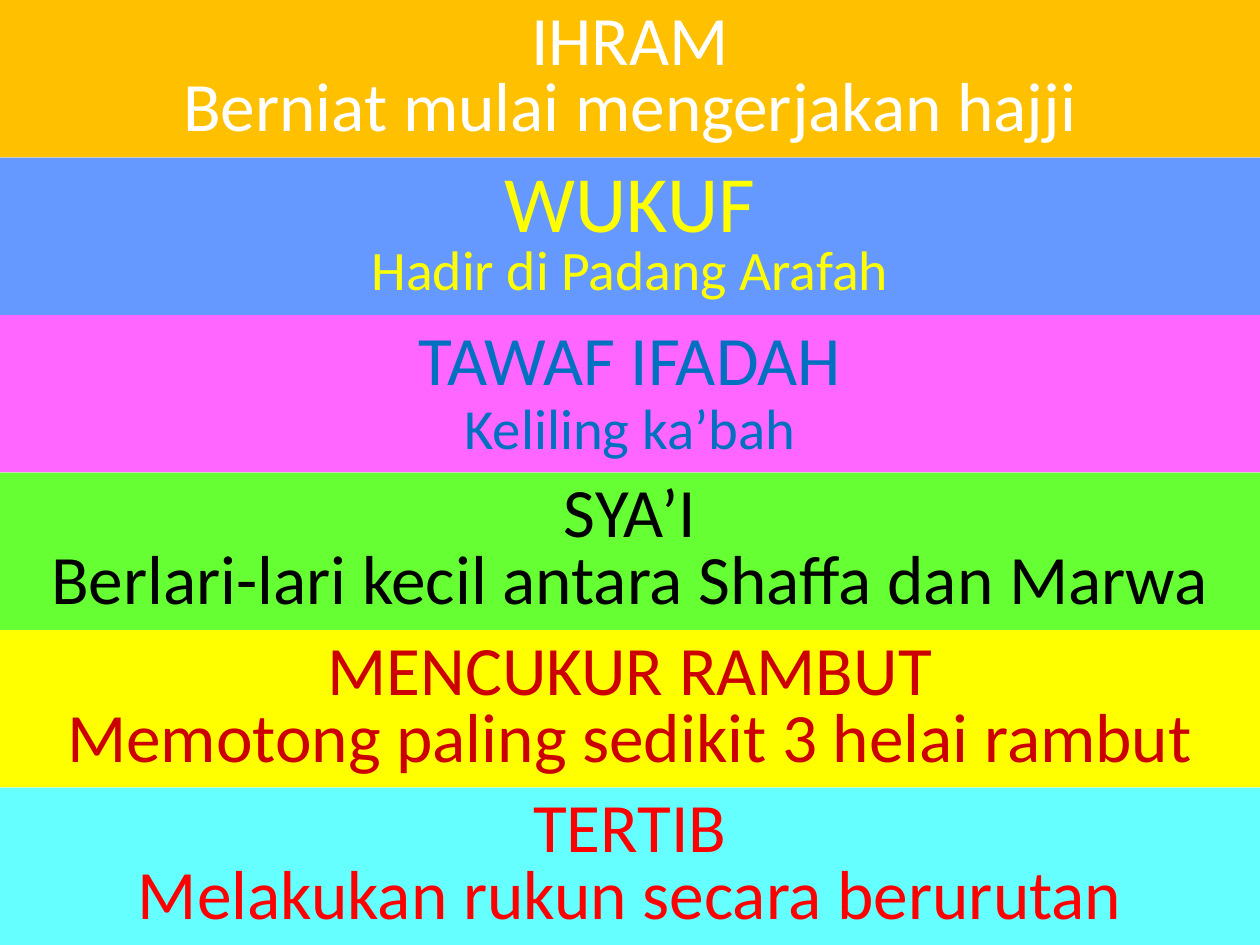
from pptx import Presentation
from pptx.dml.color import RGBColor
from pptx.enum.shapes import MSO_SHAPE
from pptx.enum.text import MSO_ANCHOR, MSO_AUTO_SIZE, PP_ALIGN
from pptx.util import Inches, Pt

RECTANGLE = MSO_SHAPE.RECTANGLE
MIDDLE = MSO_ANCHOR.MIDDLE
NO_AUTOFIT = MSO_AUTO_SIZE.NONE
CENTER = PP_ALIGN.CENTER

ORANGE = RGBColor(0xFF, 0xC0, 0x00)
BLUE = RGBColor(0x66, 0x99, 0xFF)
PINK = RGBColor(0xFF, 0x66, 0xFF)
GREEN = RGBColor(0x66, 0xFF, 0x33)
YELLOW = RGBColor(0xFF, 0xFF, 0x00)
CYAN = RGBColor(0x66, 0xFF, 0xFF)
WHITE = RGBColor(0xFF, 0xFF, 0xFF)
DARK_BLUE = RGBColor(0x00, 0x70, 0xC0)
BLACK = RGBColor(0x00, 0x00, 0x00)
DARK_RED = RGBColor(0xCC, 0x00, 0x00)
RED = RGBColor(0xFF, 0x00, 0x00)

FONT = "Calibri"
BAND_WIDTH = 10
BAND_HEIGHT = 1.25


def format_band(band, fill_color, text_color, sizes, line_spacing):
    """Style a band; sizes holds one text size per paragraph."""
    band.fill.solid()
    band.fill.fore_color.rgb = fill_color
    frame = band.text_frame
    frame.word_wrap = True
    frame.auto_size = NO_AUTOFIT
    frame.vertical_anchor = MIDDLE
    for para, size in zip(frame.paragraphs, sizes):
        para.alignment = CENTER
        para.line_spacing = line_spacing
        para.font.size = Pt(size)
        for span in para.runs:
            span.font.name = FONT
            span.font.size = Pt(size)
            span.font.color.rgb = text_color


deck = Presentation()
deck.slide_width = Inches(BAND_WIDTH)
deck.slide_height = Inches(6 * BAND_HEIGHT)
page = deck.slides.add_slide(deck.slide_layouts[5])

title = page.shapes.title
title.left, title.top = Inches(0), Inches(0)
title.width, title.height = Inches(BAND_WIDTH), Inches(BAND_HEIGHT)
# A vertical tab is a line break inside one paragraph
title.text_frame.text = "IHRAM\vBerniat mulai mengerjakan hajji"
# Tight line spacing keeps both lines, descenders included, inside the band
format_band(title, ORANGE, WHITE, [39.6], 0.8)

# heading, explanation, fill, text colour, text sizes, line spacing
pillars = [
    ("WUKUF", "Hadir di Padang Arafah", BLUE, YELLOW, (45.6, 31.8), 0.8),
    ("TAWAF IFADAH", "Keliling ka’bah", PINK, DARK_BLUE, (39.6, 32.4), 0.9),
    ("SYA’I", "Berlari-lari kecil antara Shaffa dan Marwa",
     GREEN, BLACK, (39.6, 39.6), 0.8),
    ("MENCUKUR RAMBUT", "Memotong paling sedikit 3 helai rambut",
     YELLOW, DARK_RED, (39.6, 39.6), 0.8),
    ("TERTIB", "Melakukan rukun secara berurutan",
     CYAN, RED, (39.6, 39.6), 0.8),
]
for row, (heading, explanation, fill, color, sizes, spacing) in enumerate(pillars, 1):
    band = page.shapes.add_shape(
        RECTANGLE, Inches(0), Inches(row * BAND_HEIGHT),
        Inches(BAND_WIDTH), Inches(BAND_HEIGHT))
    band.shadow.inherit = False
    band.line.fill.background()
    band.text_frame.text = f"{heading}\n{explanation}"
    format_band(band, fill, color, sizes, spacing)

deck.save("out.pptx")
